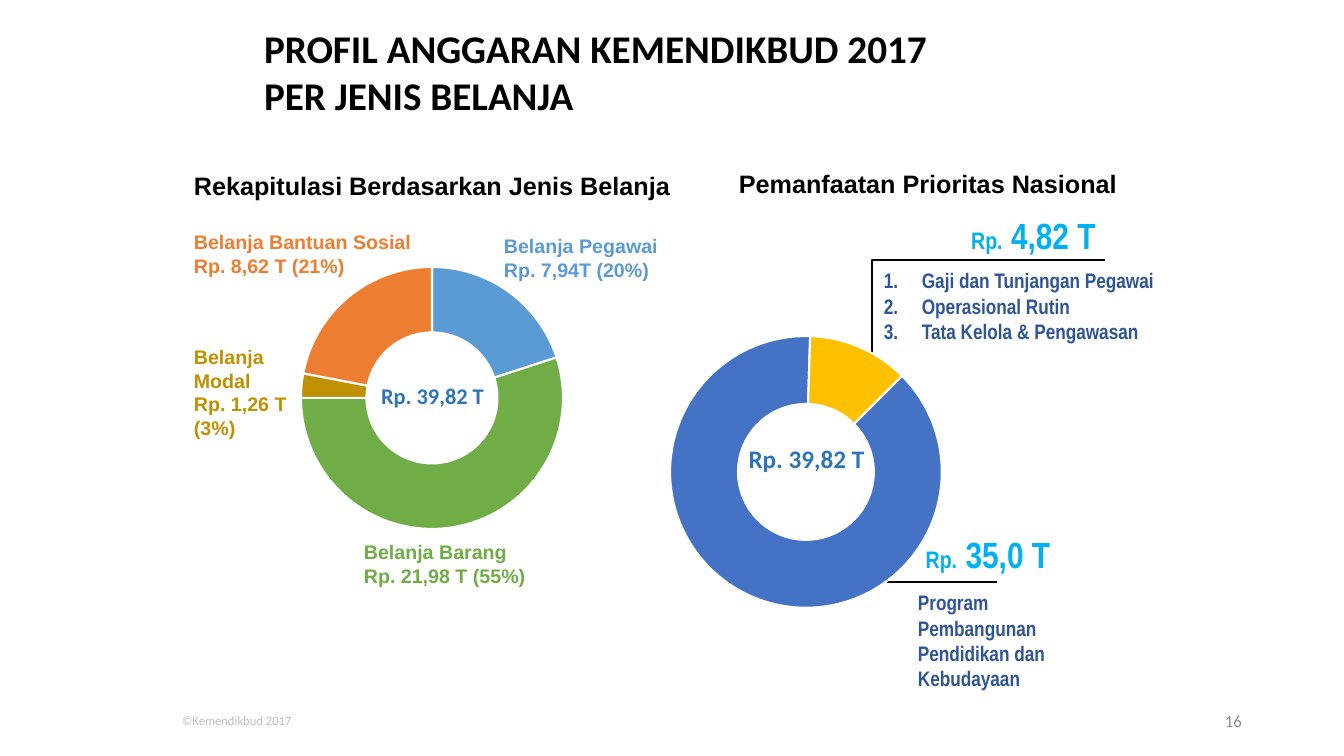
from dataclasses import dataclass

from lxml.etree import SubElement
from pptx import Presentation
from pptx.chart.data import CategoryChartData
from pptx.dml.color import RGBColor
from pptx.enum.chart import XL_CHART_TYPE as ChartType
from pptx.enum.shapes import MSO_CONNECTOR as Connector
from pptx.enum.text import MSO_ANCHOR as Anchor, MSO_AUTO_SIZE as AutoSize, PP_ALIGN as Align
from pptx.oxml import parse_xml
from pptx.oxml.ns import nsdecls, qn
from pptx.util import Emu, Pt


@dataclass(frozen=True)
class Theme:
    black: str = "000000"
    white: str = "FFFFFF"
    footer: str = "BFBFBF"
    number: str = "8C8C8C"
    total: str = "2E75B6"
    amount: str = "00B0F0"
    detail: str = "2F5597"
    employees: str = "5B9BD5"
    goods: str = "70AD47"
    capital: str = "BF9000"
    social: str = "ED7D31"
    program: str = "4472C4"
    routine: str = "FFC000"
    body: str = "Calibri"
    label: str = "Arial"
    narrow: str = "Arial Narrow"
    title_size: int = 28
    amount_size: int = 26
    heading_size: int = 18
    prefix_size: int = 17
    total_size: int = 16
    detail_size: int = 15
    label_size: int = 14
    number_size: int = 12
    chart_size: int = 10
    footer_size: int = 9


T = Theme()
EMU_PER_PX = 914400 / 100.8


def px(n):
    return Emu(round(n * EMU_PER_PX))


def rgb(color):
    return RGBColor.from_string(color)


def write(tf, lines, size, color, font=T.body, bold=True, align=Align.LEFT,
          anchor=Anchor.TOP, wrap=True, numbered=False):
    """Each line is a string or a list of (text, size) runs."""
    tf.word_wrap = wrap
    tf.auto_size = AutoSize.NONE
    tf.vertical_anchor = anchor
    for i, line in enumerate(lines):
        p = tf.paragraphs[0] if i == 0 else tf.add_paragraph()
        p.alignment = align
        if numbered:
            pPr = p._p.get_or_add_pPr()
            pPr.set("marL", str(px(38)))
            pPr.set("indent", str(-px(38)))
            SubElement(pPr, qn("a:buFont"), typeface="+mj-lt")
            SubElement(pPr, qn("a:buAutoNum"), type="arabicPeriod")
        for text, run_size in [(line, size)] if isinstance(line, str) else line:
            r = p.add_run()
            r.text = text
            r.font.size = Pt(run_size)
            r.font.name = font
            r.font.bold = bold
            r.font.color.rgb = rgb(color)


def add_text(s, box, lines, size, color, **fmt):
    sp = s.shapes.add_textbox(*map(px, box))
    write(sp.text_frame, lines, size, color, **fmt)


def add_doughnut(s, box, values, colors, plot, start=0):
    data = CategoryChartData()
    data.categories = [str(i + 1) for i in range(len(values))]
    data.add_series("Series 1", values)
    chart = s.shapes.add_chart(ChartType.DOUGHNUT, *map(px, box), data).chart
    chart.has_legend = chart.has_title = False
    chart.font.size, chart.font.name = Pt(T.chart_size), T.body
    chart.font.color.rgb = rgb(T.black)
    for i, color in enumerate(colors):
        point = chart.plots[0].series[0].points[i].format
        point.fill.solid()
        point.fill.fore_color.rgb = rgb(color)
        point.line.color.rgb = rgb(T.white)
        point.line.width = Pt(1.5)

    # Ring geometry, plot position and clear background
    space = chart._chartSpace
    for tag, value in (("firstSliceAng", start), ("holeSize", 55)):
        next(space.iter(qn(f"c:{tag}"))).set("val", str(value))
    area = next(space.iter(qn("c:plotArea")))
    for old in area.findall(qn("c:layout")):
        area.remove(old)
    x, y, w, h = plot
    area.insert(0, parse_xml(
        f'<c:layout {nsdecls("c")}><c:manualLayout><c:layoutTarget val="inner"/>'
        f'<c:xMode val="edge"/><c:yMode val="edge"/><c:x val="{x}"/><c:y val="{y}"/>'
        f'<c:w val="{w}"/><c:h val="{h}"/></c:manualLayout></c:layout>'))
    space.find(qn("c:chart")).addnext(parse_xml(
        f'<c:spPr {nsdecls("c", "a")}><a:noFill/><a:ln><a:noFill/></a:ln></c:spPr>'))


def add_bracket(s, x1, y1, x2, y2):
    """Elbow that runs vertically first, then horizontally."""
    line = s.shapes.add_connector(Connector.ELBOW, *map(px, (x1, y1, x2, y2)))
    line.line.color.rgb = rgb(T.black)
    line.line.width = Pt(1.5)
    spPr = line._element.spPr
    SubElement(spPr, qn("a:effectLst"))
    guides = spPr.find(qn("a:prstGeom")).get_or_add_avLst()
    SubElement(guides, qn("a:gd"), name="adj1", fmla="val 0")


def add_title(s, box):
    sp = s.shapes.title
    sp.left, sp.top, sp.width, sp.height = map(px, box)
    write(sp.text_frame, ["PROFIL ANGGARAN KEMENDIKBUD 2017", "PER JENIS BELANJA"],
          T.title_size, T.black)


def add_spending_types(s, box):
    x, y, w, _ = box
    add_doughnut(s, (x + 66, y + 51, 364, 364), (20, 55, 3, 22),
                 (T.employees, T.goods, T.capital, T.social), (0.14, 0, 0.72, 1))
    add_text(s, (x + 183, y + 212, 131, 37), ["Rp. 39,82 T"], T.total_size, T.total,
             align=Align.CENTER)
    add_text(s, (x, y, w, 40), ["Rekapitulasi Berdasarkan Jenis Belanja"],
             T.heading_size, T.black, font=T.label)
    labels = (
        (310, 64, 267, 57, T.employees, "Belanja Pegawai", "Rp. 7,94T (20%)"),
        (170, 370, 237, 57, T.goods, "Belanja Barang", "Rp. 21,98 T (55%)"),
        (0, 175, 150, 105, T.capital, "Belanja Modal", "Rp. 1,26 T (3%)"),
        (0, 60, 329, 57, T.social, "Belanja Bantuan Sosial", "Rp. 8,62 T (21%)"),
    )
    for dx, dy, lw, lh, color, *lines in labels:
        add_text(s, (x + dx, y + dy, lw, lh), lines, T.label_size, color, font=T.label)


def add_priorities(s, box):
    x, y, _, _ = box
    add_text(s, (x + 175, y, 516, 40), ["Pemanfaatan Prioritas Nasional"],
             T.heading_size, T.black, font=T.label)
    # Amounts and what they pay for
    for dx, dy, w, amount in ((388, 45, 183, " 4,82 T"), (331, 364, 206, " 35,0 T")):
        add_text(s, (x + dx, y + dy, w, 55),
                 [[("Rp.", T.prefix_size), (amount, T.amount_size)]],
                 T.amount_size, T.amount, font=T.narrow, align=Align.CENTER)
    add_text(s, (x + 320, y + 100, 314, 88),
             ["Gaji dan Tunjangan Pegawai", "Operasional Rutin", "Tata Kelola & Pengawasan"],
             T.detail_size, T.detail, font=T.narrow, numbered=True)
    add_text(s, (x + 354, y + 422, 202, 113),
             ["Program Pembangunan Pendidikan dan Kebudayaan"],
             T.detail_size, T.detail, font=T.narrow)
    add_text(s, (x + 145, y + 275, 215, 40), ["Rp. 39,82 T"], T.heading_size, T.total,
             align=Align.CENTER)
    # Brackets start behind the ring
    add_bracket(s, x + 318, y + 197, x + 551, y + 97)
    add_bracket(s, x + 318, y + 340, x + 443, y + 419)
    add_doughnut(s, (x, y + 158, 504, 302), (88, 12), (T.program, T.routine),
                 (0.23, 0.05, 0.54, 0.9), start=45)


def add_footer(s, box):
    x, y, w, h = box
    add_text(s, (x, y + 7, 131, 25), ["©Kemendikbud 2017"], T.footer_size, T.footer,
             bold=False, wrap=False)
    add_text(s, (x + w - 302, y, 302, h), ["16"], T.number_size, T.number,
             bold=False, align=Align.RIGHT, anchor=Anchor.MIDDLE)


def main():
    prs = Presentation()
    prs.slide_width, prs.slide_height = px(1344), px(756)
    s = prs.slides.add_slide(prs.slide_layouts[5])
    add_title(s, (254, 19, 854, 105))
    add_spending_types(s, (184, 165, 585, 427))
    add_priorities(s, (554, 163, 691, 535))
    add_footer(s, (172, 701, 1080, 40))
    prs.save("out.pptx")


if __name__ == "__main__":
    main()
